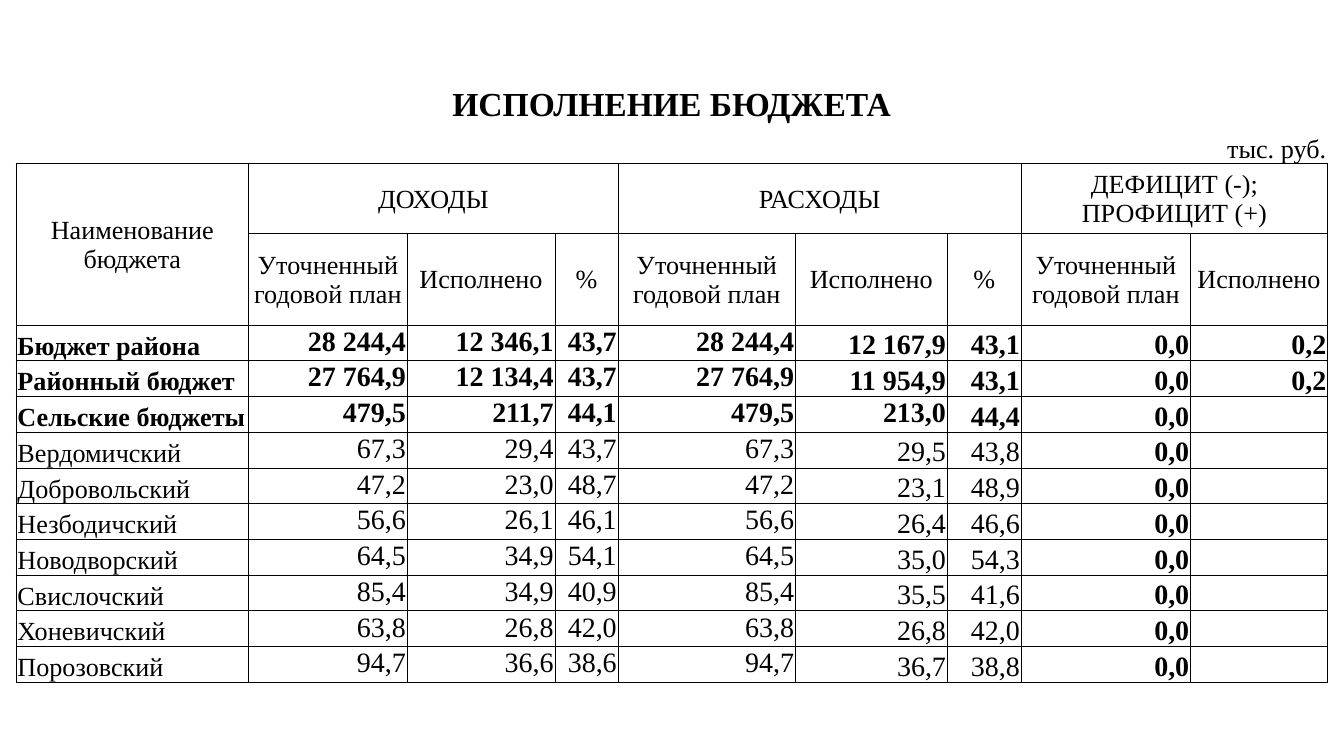
from pptx import Presentation
from pptx.dml.color import RGBColor
from pptx.enum.text import MSO_ANCHOR, PP_ALIGN
from pptx.oxml import parse_xml
from pptx.oxml.ns import nsdecls
from pptx.util import Inches, Pt

BLACK = "000000"
COLS = [1.73, 1.01, 0.17, 0.73, 0.37, 0.47, 1.32, 0.9, 0.23, 0.55, 1.26, 0.12, 0.9]
HEADS = [0.34, 0.27, 0.52, 0.68]
PLAN, DONE = "Уточненный годовой план", "Исполнено"
# First and last grid column of each visible column
SPANS = [(0, 0), (1, 2), (3, 4), (5, 5), (6, 6), (7, 8), (9, 9), (10, 10), (11, 12)]
GROUPS = [(1, 5, "ДОХОДЫ"), (6, 9, "РАСХОДЫ"), (10, 12, "ДЕФИЦИТ (-); ПРОФИЦИТ (+)")]
LABELS = [PLAN, DONE, "%", PLAN, DONE, "%", PLAN, DONE]
# Name | income plan, done, % | spending plan, done, % | balance plan, done
DATA = """
Бюджет района|28 244,4|12 346,1|43,7|28 244,4|12 167,9|43,1|0,0|0,2
Районный бюджет|27 764,9|12 134,4|43,7|27 764,9|11 954,9|43,1|0,0|0,2
Сельские бюджеты|479,5|211,7|44,1|479,5|213,0|44,4|0,0|
Вердомичский|67,3|29,4|43,7|67,3|29,5|43,8|0,0|
Добровольский|47,2|23,0|48,7|47,2|23,1|48,9|0,0|
Незбодичский|56,6|26,1|46,1|56,6|26,4|46,6|0,0|
Новодворский|64,5|34,9|54,1|64,5|35,0|54,3|0,0|
Свислочский|85,4|34,9|40,9|85,4|35,5|41,6|0,0|
Хоневичский|63,8|26,8|42,0|63,8|26,8|42,0|0,0|
Порозовский|94,7|36,6|38,6|94,7|36,7|38,8|0,0|
"""
ROWS = [line.split("|") for line in DATA.strip().splitlines()]
TOTALS = 3
NO_STYLE = "{2D5ABB26-0587-4C30-8999-92F81FD0307C}"
TOP, MID, LOW = MSO_ANCHOR.TOP, MSO_ANCHOR.MIDDLE, MSO_ANCHOR.BOTTOM
LEFT, CENTER, RIGHT = PP_ALIGN.LEFT, PP_ALIGN.CENTER, PP_ALIGN.RIGHT


def color(code):
    return RGBColor.from_string(code)


def apply(item, **values):
    for name, value in values.items():
        setattr(item, name, value)


def write(cell, text, size=14, bold=False, align=CENTER, anchor=MID):
    cell.vertical_anchor = anchor
    para = cell.text_frame.paragraphs[0]
    para.alignment = align
    run = para.add_run()
    run.text = text
    apply(run.font, name="Times New Roman", size=Pt(size), bold=bold)
    run.font.color.rgb = color(BLACK)


def border(cell, sides):
    for side in sides:
        cell._tc.get_or_add_tcPr().append(parse_xml(
            f'<a:ln{side} {nsdecls("a")} w="6350"><a:solidFill>'
            f'<a:srgbClr val="{BLACK}"/></a:solidFill></a:ln{side}>'))


def prepare(table):
    """Clear the style, then set margins, borders and fill of every cell."""
    apply(table, first_row=False, horz_banding=False)
    table._tbl.tblPr[0].text = NO_STYLE
    edge = Inches(0.01)
    for r, row in enumerate(table.rows):
        for cell in row.cells:
            apply(cell, margin_left=edge, margin_right=edge, margin_top=edge, margin_bottom=0)
            border(cell, [] if r == 0 else "B" if r == 1 else "LRTB")
            cell.fill.background()
            # Keep empty cells from stretching their row
            end = cell.text_frame.paragraphs[0]._p.get_or_add_endParaRPr()
            end.set("sz", "1400")


def join(table, row, first, last, bottom=None):
    cell = table.cell(row, first)
    if first != last or bottom:
        cell.merge(table.cell(bottom or row, last))
    return cell


def header(table):
    # Title and unit rows
    write(join(table, 0, 0, 12), "ИСПОЛНЕНИЕ БЮДЖЕТА", size=18, bold=True)
    for first in (2, 4, 8, 10):
        join(table, 1, first, first + 1)
    write(table.cell(1, 12), "тыс. руб.", align=RIGHT, anchor=LOW)
    # Two-level column heads
    write(join(table, 2, 0, 0, bottom=3), "Наименование бюджета")
    for first, last, text in GROUPS:
        write(join(table, 2, first, last), text)
    for span, text in zip(SPANS[1:], LABELS):
        write(join(table, 3, *span), text)


def body(table):
    for r, values in enumerate(ROWS):
        for c, (span, text) in enumerate(zip(SPANS, values)):
            cell = join(table, r + len(HEADS), *span)
            if not text:
                continue
            high = 1 <= c <= 4 or (c == 5 and r == TOTALS - 1)
            write(cell, text, size=15 if c else 14, bold=r < TOTALS or c == 7,
                  align=RIGHT if c else LEFT, anchor=TOP if high else LOW)


def budget(slide, left, top, width, height):
    count = len(HEADS) + len(ROWS)
    box = [Inches(v) for v in (left, top, width, height)]
    table = slide.shapes.add_table(count, len(COLS), *box).table
    step = (height - sum(HEADS)) / len(ROWS)
    for col, size in zip(table.columns, COLS):
        col.width = Inches(size)
    for row, size in zip(table.rows, HEADS + [step] * len(ROWS)):
        row.height = Inches(size)
    prepare(table)
    header(table)
    body(table)


def main():
    deck = Presentation()
    # Widescreen, 16:9
    apply(deck, slide_width=Inches(10), slide_height=Inches(10 * 9 / 16))
    slide = deck.slides.add_slide(deck.slide_layouts[6])
    budget(slide, 0.12, 0.61, 9.76, 4.47)
    deck.save("out.pptx")


if __name__ == "__main__":
    main()
